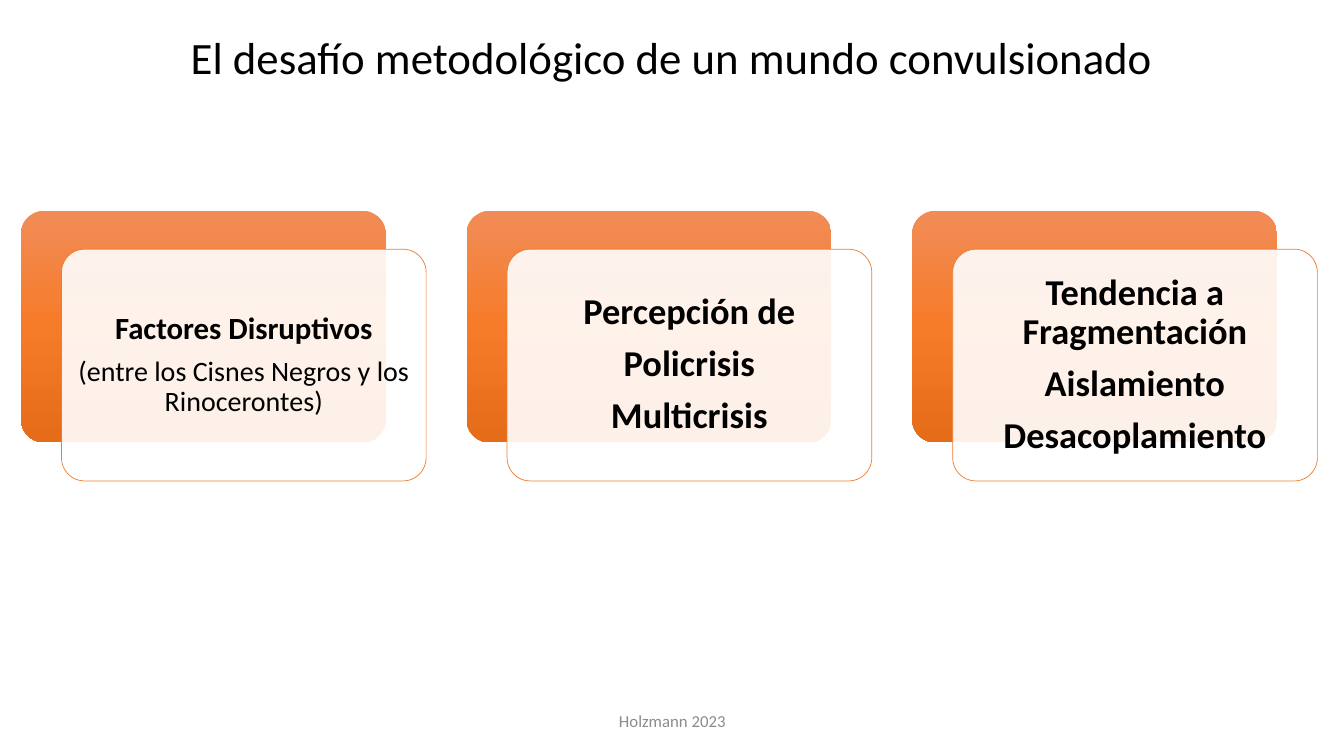
from copy import deepcopy

from lxml.etree import SubElement
from pptx import Presentation
from pptx.dml.color import RGBColor
from pptx.enum.shapes import MSO_SHAPE
from pptx.enum.text import MSO_ANCHOR, PP_ALIGN
from pptx.oxml.ns import qn
from pptx.util import Cm, Pt

TITLE = "El desafío metodológico de un mundo convulsionado"
FOOTER = "Holzmann 2023"
CARDS = [
    (0.24, [("Factores Disruptivos", 22, True),
            ("(entre los Cisnes Negros y los Rinocerontes)", 20, False)]),
    (0.28, [("Percepción de", 26, True),
            ("Policrisis", 26, True),
            ("Multicrisis", 26, True)]),
    (0.28, [("Tendencia a Fragmentación", 26, True),
            ("Aislamiento", 26, True),
            ("Desacoplamiento", 26, True)]),
]
GRADIENT = [(0, "F18C57"), (0.5, "F67B28"), (1, "E56C19")]
FONT = "Calibri"
LEFT, TOP, PITCH = 0.53, 5.31, 11.23
CARD_WIDTH, CARD_HEIGHT = 9.19, 5.84
SHIFT_X, SHIFT_Y = 1.02, 0.97


def color(value):
    return RGBColor.from_string(value)


def format_paragraph(paragraph, size, value, bold=False):
    paragraph.alignment = PP_ALIGN.CENTER
    for run in paragraph.runs:
        run.font.name = FONT
        run.font.size = Pt(size)
        run.font.bold = bold
        run.font.color.rgb = color(value)


def add_rounded(slide, left, top):
    shape = slide.shapes.add_shape(
        MSO_SHAPE.ROUNDED_RECTANGLE, Cm(left), Cm(top), Cm(CARD_WIDTH), Cm(CARD_HEIGHT))
    shape.adjustments[0] = 0.1
    shape.shadow.inherit = False
    return shape


def add_back(slide, left, top):
    shape = add_rounded(slide, left, top)
    shape.line.fill.background()
    shape.fill.gradient()
    shape.fill.gradient_angle = 270
    stop_list = shape._element.spPr.find(qn("a:gradFill")).find(qn("a:gsLst"))
    stop_list.append(deepcopy(stop_list[0]))
    for stop, (position, value) in zip(shape.fill.gradient_stops, GRADIENT):
        stop.position = position
        stop.color.rgb = color(value)


def add_front(slide, left, top, inset, lines):
    shape = add_rounded(slide, left, top)
    shape.fill.solid()
    shape.fill.fore_color.rgb = color("FFFFFF")
    fill_color = shape._element.spPr.find(qn("a:solidFill"))[0]
    SubElement(fill_color, qn("a:alpha")).set("val", "90000")
    shape.line.color.rgb = color("ED7D31")
    shape.line.width = Pt(0.5)
    frame = shape.text_frame
    frame.word_wrap = True
    frame.vertical_anchor = MSO_ANCHOR.MIDDLE
    frame.margin_left = frame.margin_right = Cm(inset)
    frame.margin_top = frame.margin_bottom = Cm(inset)
    frame.text = "\n".join(text for text, size, bold in lines)
    for paragraph, (text, size, bold) in zip(frame.paragraphs, lines):
        format_paragraph(paragraph, size, "000000", bold)
        paragraph.line_spacing = 0.9
        paragraph.space_after = Pt(size * 0.35)


def main():
    presentation = Presentation()
    presentation.slide_width, presentation.slide_height = Cm(33.87), Cm(19.05)
    slide = presentation.slides.add_slide(presentation.slide_layouts[5])

    title = slide.shapes.title
    title.left, title.top, title.width, title.height = Cm(4.42), Cm(0.61), Cm(25.02), Cm(1.63)
    title.text_frame.text = TITLE
    title.text_frame.word_wrap = False
    format_paragraph(title.text_frame.paragraphs[0], 32, "000000")

    footer = slide.shapes.add_textbox(Cm(11.23), Cm(17.65), Cm(11.43), Cm(1.02))
    footer.text_frame.text = FOOTER
    footer.text_frame.word_wrap = True
    footer.text_frame.vertical_anchor = MSO_ANCHOR.MIDDLE
    format_paragraph(footer.text_frame.paragraphs[0], 12, "8C8C8C")

    for index, (inset, lines) in enumerate(CARDS):
        left = LEFT + index * PITCH
        add_back(slide, left, TOP)
        add_front(slide, left + SHIFT_X, TOP + SHIFT_Y, inset, lines)

    presentation.save("out.pptx")


if __name__ == "__main__":
    main()
